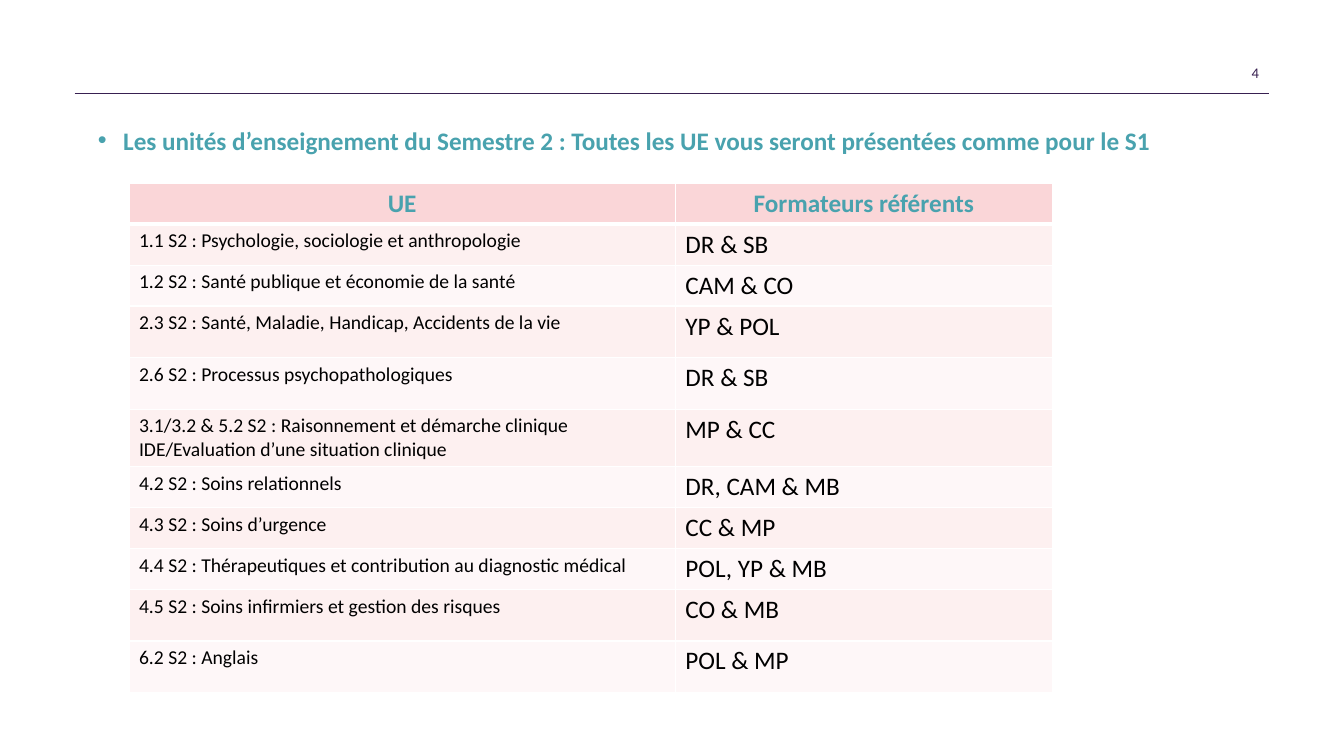
from lxml import etree
from pptx import Presentation
from pptx.dml.color import RGBColor
from pptx.enum.shapes import MSO_CONNECTOR
from pptx.enum.text import MSO_ANCHOR, PP_ALIGN
from pptx.oxml.ns import qn
from pptx.util import Cm, Pt

STRAIGHT = MSO_CONNECTOR.STRAIGHT
TOP, MIDDLE = MSO_ANCHOR.TOP, MSO_ANCHOR.MIDDLE
LEFT, CENTER, RIGHT = PP_ALIGN.LEFT, PP_ALIGN.CENTER, PP_ALIGN.RIGHT

FONT = "Calibri"
WHITE = RGBColor(0xFF, 0xFF, 0xFF)
BLACK = RGBColor(0x00, 0x00, 0x00)
PURPLE = RGBColor(0x38, 0x20, 0x51)
TEAL = RGBColor(0x49, 0xA2, 0xAE)
HEADER_PINK = RGBColor(0xFA, 0xD6, 0xD8)
BAND_PINKS = (RGBColor(0xFE, 0xF7, 0xF8), RGBColor(0xFD, 0xF0, 0xF0))

SHORT, MEDIUM, TALL = Cm(1.03), Cm(1.3), Cm(1.45)
HEADINGS = ("UE", "Formateurs référents")
UNITS = (
    ("1.1 S2 : Psychologie, sociologie et anthropologie", "DR & SB", SHORT),
    ("1.2 S2 : Santé publique et économie de la santé", "CAM & CO", SHORT),
    ("2.3 S2 : Santé, Maladie, Handicap, Accidents de la vie", "YP & POL", MEDIUM),
    ("2.6 S2 : Processus psychopathologiques", "DR & SB", MEDIUM),
    ("3.1/3.2 & 5.2 S2 : Raisonnement et démarche clinique "
     "IDE/Evaluation d’une situation clinique", "MP & CC", TALL),
    ("4.2 S2 : Soins relationnels", "DR, CAM & MB", SHORT),
    ("4.3 S2 : Soins d’urgence", "CC & MP", SHORT),
    ("4.4 S2 : Thérapeutiques et contribution au diagnostic médical",
     "POL, YP & MB", SHORT),
    ("4.5 S2 : Soins infirmiers et gestion des risques", "CO & MB", MEDIUM),
    ("6.2 S2 : Anglais", "POL & MP", MEDIUM),
)


def add_run(paragraph, text, size, color, bold=False):
    """Append one formatted run to the paragraph."""
    run = paragraph.add_run()
    run.text = text
    run.font.name = FONT
    run.font.size = Pt(size)
    run.font.bold = bold
    run.font.color.rgb = color


def add_page_header(slide, left, top, width, height):
    """Place the page number at the right of the box and a rule along its bottom."""
    number_width = Cm(7.62)
    page_number = slide.shapes.add_textbox(
        left + width - number_width, top, number_width, height)
    frame = page_number.text_frame
    frame.word_wrap = True
    frame.vertical_anchor = MIDDLE
    frame.paragraphs[0].alignment = RIGHT
    add_run(frame.paragraphs[0], "4", 10.5, PURPLE)

    rule = slide.shapes.add_connector(
        STRAIGHT, left, top + height, left + width, top + height)
    rule.line.color.rgb = PURPLE
    rule.line.width = Pt(0.5)
    etree.SubElement(rule._element.spPr, qn("a:effectLst"))


def add_heading(slide, left, top, width, height):
    """Fit the title into the box as a bulleted line."""
    title = slide.shapes.title
    title.left, title.top, title.width, title.height = left, top, width, height
    frame = title.text_frame
    frame.word_wrap = True
    frame.vertical_anchor = TOP
    paragraph = frame.paragraphs[0]
    paragraph.alignment = LEFT
    properties = paragraph._p.get_or_add_pPr()
    indent = Cm(0.64)
    properties.set("marL", str(indent))
    properties.set("indent", str(-indent))
    etree.SubElement(properties, qn("a:buFont"), typeface="Arial")
    etree.SubElement(properties, qn("a:buChar"), char="•")
    add_run(paragraph,
            "Les unités d’enseignement du Semestre 2 : "
            "Toutes les UE vous seront présentées comme pour le S1",
            18, TEAL, bold=True)


def set_borders(cell, bottom_width):
    """Draw white borders around the cell."""
    properties = cell._tc.get_or_add_tcPr()
    for side in "LRTB":
        width = Pt(bottom_width if side == "B" else 1)
        border = etree.SubElement(properties, qn(f"a:ln{side}"), w=str(width))
        fill = etree.SubElement(border, qn("a:solidFill"))
        etree.SubElement(fill, qn("a:srgbClr"), val=str(WHITE))


def fill_cell(cell, text, size, color, background, header=False):
    """Write and format one cell of the table."""
    set_borders(cell, 3 if header else 1)
    cell.fill.solid()
    cell.fill.fore_color.rgb = background
    paragraph = cell.text_frame.paragraphs[0]
    paragraph.alignment = CENTER if header else LEFT
    add_run(paragraph, text, size, color, bold=header)


def add_units_table(slide, left, top, width):
    """Build the table of teaching units and their referents."""
    heights = [SHORT] + [height for _, _, height in UNITS]
    table = slide.shapes.add_table(
        len(heights), len(HEADINGS), left, top, width, sum(heights)).table
    unit_width = Cm(13.77)
    table.columns[0].width = unit_width
    table.columns[1].width = width - unit_width
    for row, height in zip(table.rows, heights):
        row.height = height
    for column, heading in enumerate(HEADINGS):
        fill_cell(table.cell(0, column), heading, 18, TEAL, HEADER_PINK, header=True)
    for row, (unit, referents, _) in enumerate(UNITS, start=1):
        band = BAND_PINKS[row % 2]
        fill_cell(table.cell(row, 0), unit, 14, BLACK, band)
        fill_cell(table.cell(row, 1), referents, 18, BLACK, band)


def main():
    """Build the slide and save it."""
    presentation = Presentation()
    presentation.slide_width = Cm(33.87)
    presentation.slide_height = Cm(19.05)
    slide = presentation.slides.add_slide(presentation.slide_layouts[5])
    add_page_header(slide, Cm(1.88), Cm(1.32), Cm(30.1), Cm(1.02))
    add_heading(slide, Cm(2.21), Cm(3.02), Cm(27.86), Cm(1.2))
    add_units_table(slide, Cm(3.25), Cm(4.62), Cm(23.27))
    presentation.save("out.pptx")


if __name__ == "__main__":
    main()
